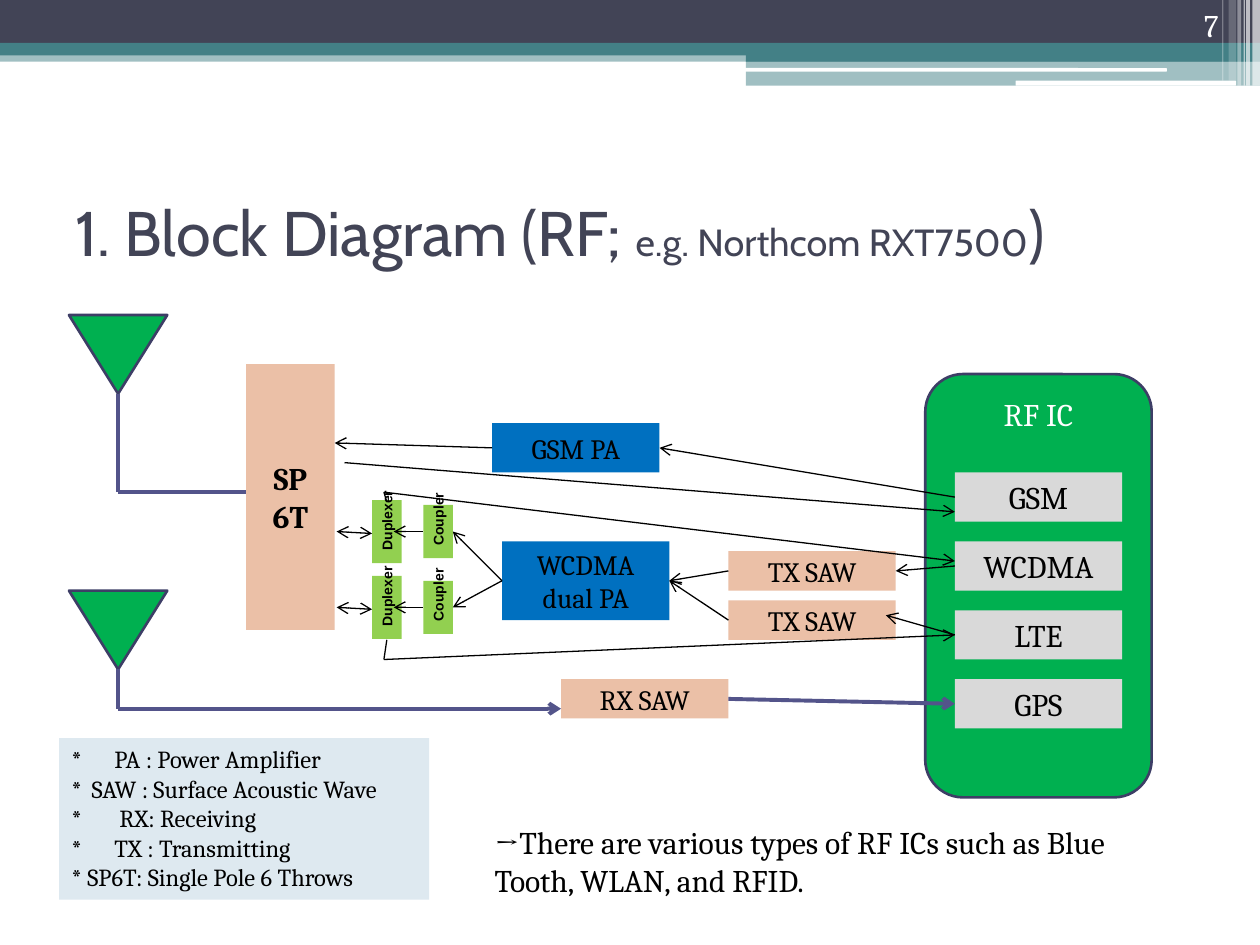
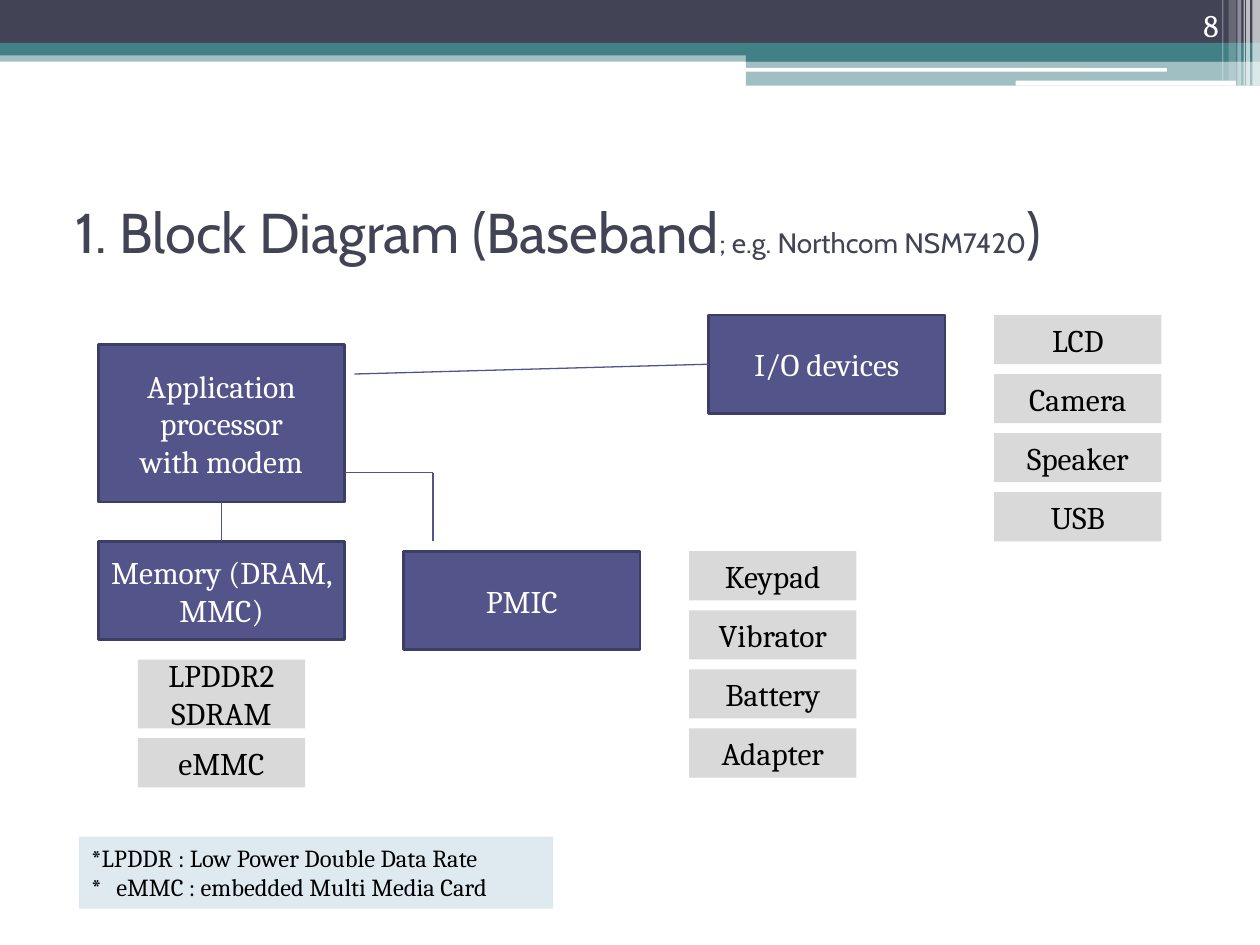
"""Build two block-diagram slides, RF and baseband, on a 128 by 96 grid."""
import pptx
import pptx.dml.color
import pptx.enum.shapes
import pptx.enum.text
import pptx.oxml
import pptx.oxml.ns
import pptx.util

COLORS = {
    "ink": "424456", "teal": "438086", "white": "FFFFFF", "black": "000000",
    "indigo": "53548A", "edge": "3D3E66", "green": "00B050", "lime": "92D050",
    "gray": "D9D9D9", "blue": "0070C0", "peach": "EBC0A7", "pale": "DEE9F0",
}
SHAPES = pptx.enum.shapes.MSO_SHAPE
ALIGN = pptx.enum.text.PP_ALIGN
ANCHOR = pptx.enum.text.MSO_ANCHOR
RGB = pptx.dml.color.RGBColor.from_string
Pt = pptx.util.Pt
UNIT = pptx.util.Inches(10) / 128


def place(page, area, text="", fill=None, kind=SHAPES.RECTANGLE, edge=None, size=18,
          color="black", font="Cambria", bold=False, align=ALIGN.CENTER,
          anchor=ANCHOR.MIDDLE, alpha=100):
    """Put a shape, or a text box when there is no fill, on grid cells."""
    area = [round(cells * UNIT) for cells in area]
    if fill:
        box = page.shapes.add_shape(kind, *area)
        box.shadow.inherit = False
        box.fill.solid()
        box.fill.fore_color.rgb = RGB(COLORS[fill])
        if alpha < 100:
            tint = box.fill._xPr.find(".//" + pptx.oxml.ns.qn("a:srgbClr"))
            pptx.oxml.ns.qn("a:alpha")
            tint.append(pptx.oxml.parse_xml(
                f'<a:alpha {pptx.oxml.ns.nsdecls("a")} val="{alpha * 1000}"/>'))
        if edge:
            box.line.color.rgb = RGB(COLORS[edge])
            box.line.width = Pt(1.5)
        else:
            box.line.fill.background()
    else:
        box = page.shapes.add_textbox(*area)
    frame = box.text_frame
    frame.word_wrap = True
    frame.vertical_anchor = anchor
    if text:
        frame.text = text
    for para in frame.paragraphs:
        para.alignment = align
        for span in para.runs:
            span.font.name = font
            span.font.size = Pt(size)
            span.font.bold = bold
            span.font.color.rgb = RGB(COLORS[color])
    return box


def link(page, start, end, color="black", width=0.75, arrows=("tail",)):
    """Draw a line between grid points or (box, side) pairs."""
    points = [(0, 0) if hasattr(point[0], "shape_id") else point for point in (start, end)]
    line = page.shapes.add_connector(
        pptx.enum.shapes.MSO_CONNECTOR.STRAIGHT,
        *[round(cells * UNIT) for point in points for cells in point])
    if hasattr(start[0], "shape_id"):
        line.begin_connect(*start)
    if hasattr(end[0], "shape_id"):
        line.end_connect(*end)
    line.line.color.rgb = RGB(COLORS[color])
    line.line.width = Pt(width)
    space = pptx.oxml.ns.nsdecls("a")
    for name in arrows:
        line.line._get_or_add_ln().append(
            pptx.oxml.parse_xml(f'<a:{name}End {space} type="arrow"/>'))
    line._element.spPr.append(pptx.oxml.parse_xml(f"<a:effectLst {space}/>"))


deck = pptx.Presentation()
deck.slide_width = pptx.util.Inches(10)
deck.slide_height = pptx.util.Inches(7.5)

BANDS = [
    ((0, 5.12, 128, 1.15), "teal", 50), ((0, 0, 128, 4.35), "ink", 100),
    ((0, 4.35, 128, 1.28), "teal", 100), ((75.78, 4.99, 52.22, 1.28), "teal", 100),
    ((75.78, 6.14, 52.22, 2.56), "teal", 50),
]
BARS = [(75.65, 6.91, 42.88, 0.38), (103.17, 8.19, 22.4, 0.51)]
STRIPES = [(127.23, 0.77, 8.7, 65), (126.59, 0.38, 8.7, 65), (126.34, 0.13, 8.7, 60),
           (125.7, 0.38, 8.7, 40), (124.8, 0.77, 8.19, 20), (124.16, 0.13, 8.19, 30)]
TITLES = [
    ("7", [("1. Block Diagram (RF; ", 36), ("e.g. Northcom RXT7500", 21.6), (")", 36)]),
    ("8", [("1. Block Diagram (Baseband", 32), ("; e.g. Northcom NSM7420", 16), (")", 32)]),
]
LEGENDS = [
    ((6, 75, 37.6, 16.4), [
        ("*\tPA : Power Amplifier", 0.34), ("*\tSAW : Surface Acoustic Wave", 0.16),
        ("*\tRX: Receiving", 0.38), ("*\tTX : Transmitting", 0.34),
        ("* SP6T: Single Pole 6 Throws", 0)]),
    ((8, 85, 48.2, 7.3), [
        ("*LPDDR : Low Power Double Data Rate", 0),
        ("*\teMMC : embedded Multi Media Card", 0.2)]),
]

pages = []
for (number, title), (legend_area, entries) in zip(TITLES, LEGENDS):
    page = deck.slides.add_slide(deck.slide_layouts[6])
    pages.append(page)
    for area, fill, alpha in BANDS:
        place(page, area, fill=fill, alpha=alpha)
    for area in BARS:
        place(page, area, fill="white", kind=SHAPES.ROUNDED_RECTANGLE)
    for left, width, height, alpha in STRIPES:
        place(page, (left, 0, width, height), fill="white", alpha=alpha)
    heading = place(page, (6.4, 16, 115.2, 15), align=ALIGN.LEFT)
    for words, size in title:
        span = heading.text_frame.paragraphs[0].add_run()
        span.text = words
        span.font.name = "Cabin"
        span.font.size = Pt(size)
        span.font.color.rgb = RGB(COLORS["ink"])
    place(page, (114.43, 0, 10.62, 5.12), number, color="white", align=ALIGN.RIGHT,
          anchor=ANCHOR.BOTTOM)
    legend = place(page, legend_area, "\n".join(words for words, stop in entries), "pale",
                   size=14, align=ALIGN.LEFT, anchor=ANCHOR.TOP)
    for para, (words, stop) in zip(legend.text_frame.paragraphs, entries):
        if stop:
            para._p.get_or_add_pPr().append(pptx.oxml.parse_xml(
                f'<a:tabLst {pptx.oxml.ns.nsdecls("a")}>'
                f'<a:tab pos="{pptx.util.Inches(stop)}" algn="l"/></a:tabLst>'))

radio, baseband = pages

chip = place(radio, (94, 38, 23, 43), "RF IC", "green", SHAPES.ROUNDED_RECTANGLE, "edge",
             color="white", anchor=ANCHOR.TOP)
chip.text_frame.margin_top = pptx.util.Inches(0.08)
for row in (32, 60):
    antenna = place(radio, (7, row, 10, 8), "", "green", SHAPES.ISOSCELES_TRIANGLE, "edge")
    antenna.rotation = 180
ports = {}
for index, name in enumerate(("GSM", "WCDMA", "LTE", "GPS")):
    ports[name] = place(radio, (97, 48 + 7 * index, 17, 5), name, "gray")
gsm_amp = place(radio, (50, 43, 17, 5), "GSM PA", "blue", size=16)
wcdma_amp = place(radio, (51, 55, 17, 8), "WCDMA dual PA", "blue", size=16)
rx_saw = place(radio, (57, 69, 17, 4), "RX SAW", "peach", size=16)
tx_saws = [place(radio, (74, row, 17, 4), "TX SAW", "peach", size=16) for row in (56, 61)]
place(radio, (25, 37, 9, 27), "SP 6T", "peach", bold=True)

for start, end, arrows in [
    ((12, 40), (12, 50), ()), ((12, 50), (25, 50), ()), ((12, 68), (12, 72), ()),
    ((12, 72), (57, 72), ("tail",)), ((rx_saw, 3), (ports["GPS"], 1), ("tail",)),
]:
    link(radio, start, end, "indigo", 2.25, arrows)

for row in (54, 61.7):
    for name, left, height in (("Coupler", 43, 5.4), ("Duplexer", 37.8, 6.4)):
        part = place(radio, (left, row - height / 2, 3, height), name, "lime", size=8,
                     font="Arial", bold=True)
        part.rotation = 180
        part.text_frame.word_wrap = False
        part.text_frame._txBody.bodyPr.set("vert", "eaVert")
    link(radio, (wcdma_amp, 1), (46, row))
    link(radio, (43, row), (40, row))
    link(radio, (37.8, row + 0.2), (34.2, row), arrows=("head", "tail"))

for start, end in [
    ((ports["GSM"], 1), (gsm_amp, 3)), ((gsm_amp, 1), (34, 45)), ((35, 47), (97, 52)),
    ((ports["WCDMA"], 1), (tx_saws[0], 3)), ((tx_saws[0], 1), (wcdma_amp, 3)),
    ((ports["LTE"], 1), (90, 62.5)), ((tx_saws[1], 1), (wcdma_amp, 3)),
    ((39, 67), (ports["LTE"], 1)), ((39, 50), (97, 57)),
]:
    link(radio, start, end)
link(radio, (39, 67), (39.3, 65), arrows=())
link(radio, (39, 50), (39.3, 51), arrows=())
place(radio, (49, 83, 69, 9.1),
      "→There are various types of RF ICs such as Blue Tooth, WLAN, and RFID.",
      align=ALIGN.LEFT, anchor=ANCHOR.TOP)

blocks = {}
for name, area, text in [
    ("processor", (10, 35, 25, 16), "Application processor\nwith modem"),
    ("memory", (10, 55, 25, 10), "Memory (DRAM, MMC)"),
    ("power", (41, 56, 24, 10), "PMIC"),
    ("devices", (72, 32, 24, 10), "I/O devices"),
]:
    blocks[name] = place(baseband, area, text, "indigo", edge="edge", color="white")
for start, end in [
    ((blocks["processor"], 2), (blocks["memory"], 0)), ((35, 48), (44, 48)),
    ((44, 48), (44, 55)), ((36, 38), (blocks["devices"], 1)),
]:
    link(baseband, start, end, "indigo", arrows=())
for left, top, names in [
    (101, 32, ("LCD", "Camera", "Speaker", "USB")),
    (70, 56, ("Keypad", "Vibrator", "Battery", "Adapter")),
]:
    for index, name in enumerate(names):
        place(baseband, (left, top + 6 * index, 17, 5), name, "gray")
place(baseband, (14, 67, 17, 7), "LPDDR2 SDRAM", "gray")
place(baseband, (14, 75, 17, 5), "eMMC", "gray")

deck.save("out.pptx")
